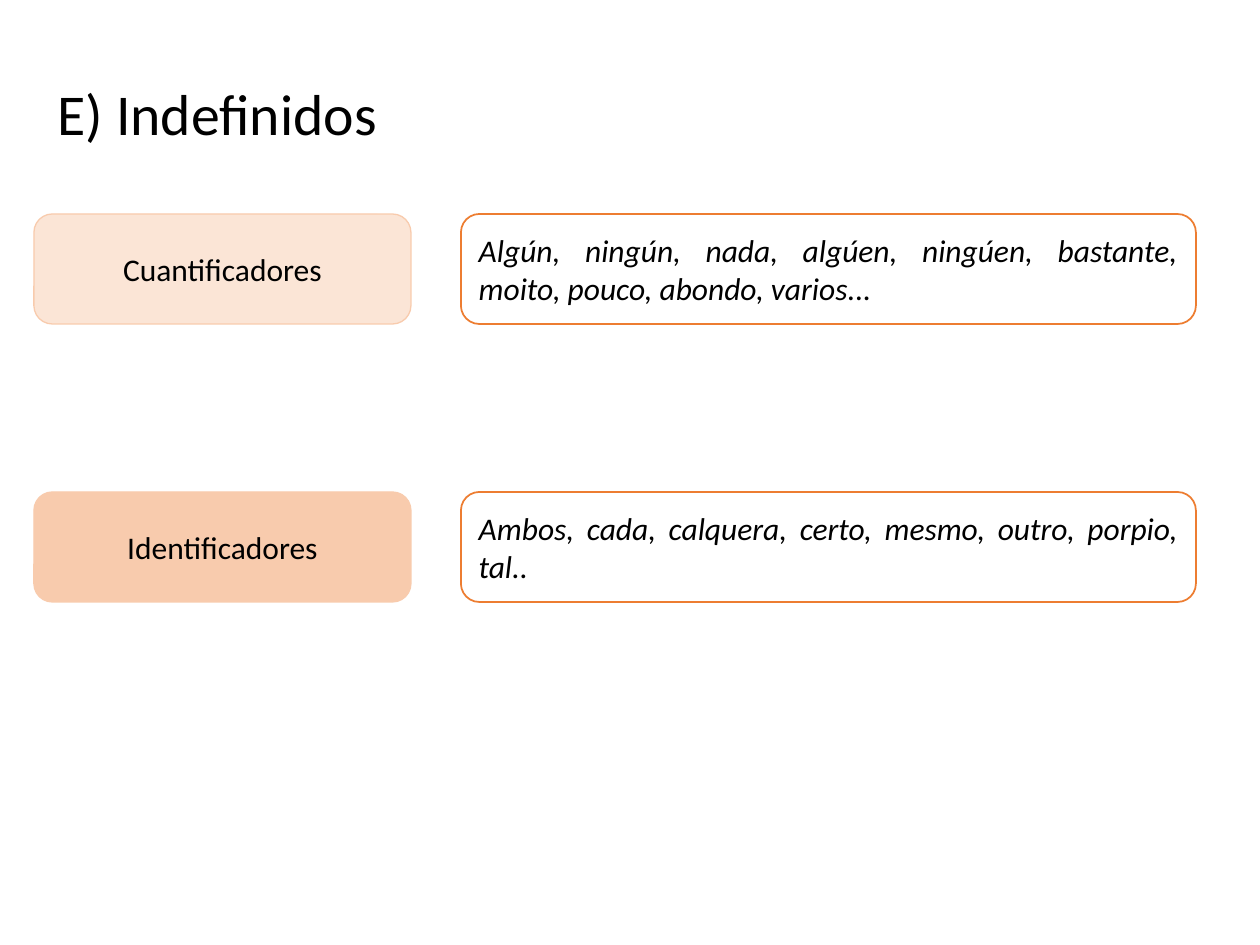
from pptx import Presentation
from pptx.dml.color import RGBColor
from pptx.enum.shapes import MSO_SHAPE as Shape
from pptx.enum.text import MSO_ANCHOR as Anchor, PP_ALIGN as Align
from pptx.util import Pt

PX = 914400 // 126
BLACK = RGBColor(0x00, 0x00, 0x00)
WHITE = RGBColor(0xFF, 0xFF, 0xFF)
PALE_PEACH = RGBColor(0xFB, 0xE5, 0xD6)
PEACH = RGBColor(0xF8, 0xCB, 0xAD)
ORANGE = RGBColor(0xED, 0x7D, 0x31)

LABEL_WIDTH, EXAMPLES_LEFT, EXAMPLES_WIDTH = 377, 427, 735
ROW_LEFT, ROW_TOP, ROW_HEIGHT, ROW_PITCH = 34, 214, 110, 278

CLASSES = [
    ("Cuantificadores", PALE_PEACH,
     "Algún, ningún, nada, algúen, ningúen, bastante, moito, pouco, abondo, varios..."),
    ("Identificadores", PEACH,
     "Ambos, cada, calquera, certo, mesmo, outro, porpio, tal.."),
]


def emu(*lengths):
    return [length * PX for length in lengths]


def write(frame, text, align, **font_format):
    frame.word_wrap = True
    frame.vertical_anchor = Anchor.MIDDLE
    paragraph = frame.paragraphs[0]
    paragraph.alignment = align
    run = paragraph.add_run()
    run.text = text
    run.font.color.rgb = BLACK
    for attribute, value in {"name": "Calibri", **font_format}.items():
        setattr(run.font, attribute, value)
    return paragraph


def add_title(slide, box, text):
    heading = slide.shapes.add_textbox(*emu(*box))
    paragraph = write(heading.text_frame, text, Align.LEFT, size=Pt(33))
    paragraph.line_spacing = 0.9


def add_card(slide, box, fill, line, line_width, text, align, italic):
    card = slide.shapes.add_shape(Shape.ROUNDED_RECTANGLE, *emu(*box))
    card.shadow.inherit = False
    card.fill.solid()
    card.fill.fore_color.rgb = fill
    card.line.color.rgb = line
    card.line.width = Pt(line_width)
    write(card.text_frame, text, align, size=Pt(18), italic=italic)


def add_class_row(slide, box, label, label_fill, examples):
    """Place a class label and, to its right, the words of that class."""
    left, top, width, height = box
    add_card(slide, (left, top, LABEL_WIDTH, height),
             label_fill, PEACH, 0.75, label, Align.CENTER, False)
    add_card(slide, (left + EXAMPLES_LEFT, top, width - EXAMPLES_LEFT, height),
             WHITE, ORANGE, 1, examples, Align.JUSTIFY, True)


def main():
    presentation = Presentation()
    presentation.slide_width, presentation.slide_height = emu(1260, 945)
    slide = presentation.slides.add_slide(presentation.slide_layouts[6])
    add_title(slide, (45, 25, 1086, 183), "E) Indefinidos")
    row_width = EXAMPLES_LEFT + EXAMPLES_WIDTH
    for index, (label, fill, examples) in enumerate(CLASSES):
        row_box = (ROW_LEFT, ROW_TOP + index * ROW_PITCH, row_width, ROW_HEIGHT)
        add_class_row(slide, row_box, label, fill, examples)
    presentation.save("out.pptx")


if __name__ == "__main__":
    main()
